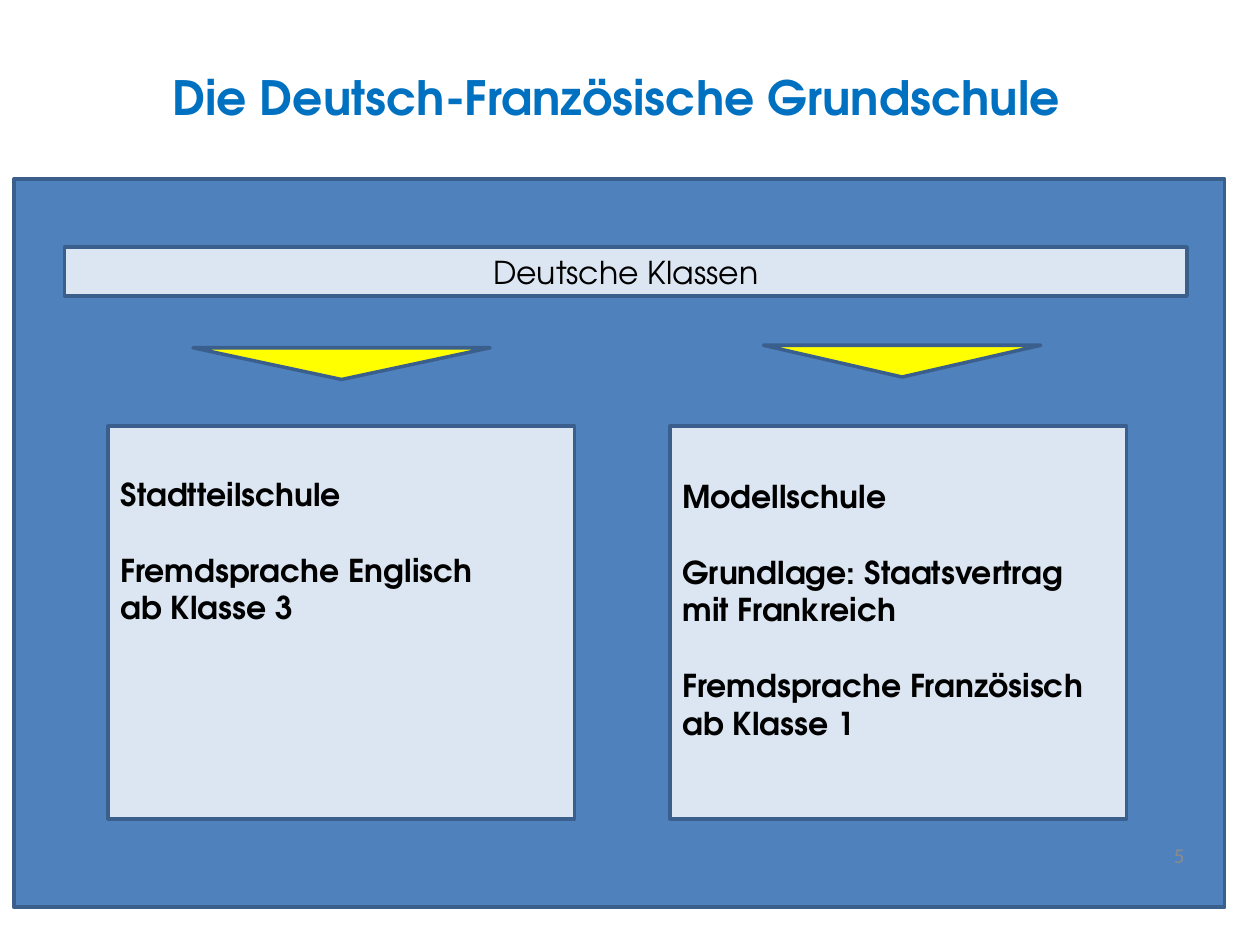
from dataclasses import dataclass

from pptx import Presentation
from pptx import util as u
from pptx.dml.color import RGBColor
from pptx.enum import shapes, text

FONT = "TeX Gyre Adventor"
COLORS = {
    "title": "0070C0",
    "panel": "4F81BD",
    "box": "DCE6F2",
    "arrow": "FFFF00",
    "border": "3A5F8C",
    "text": "000000",
    "number": "8B8B8B",
}
BLOCK_GAP = 21.5  # points between text blocks
BOX_TOP, BOX_HEIGHT = 8.59, 7.92
ARROW_HEIGHT = 0.64


@dataclass(frozen=True)
class Area:
    """Position and size in centimetres."""
    left: float
    top: float
    width: float
    height: float

    def lengths(self) -> list[u.Cm]:
        return [u.Cm(v) for v in (self.left, self.top, self.width, self.height)]


@dataclass(frozen=True)
class SchoolType:
    left: float
    width: float
    text_top: float
    arrow: Area
    blocks: tuple[tuple[str, ...], ...]  # lines grouped into blocks


SCHOOL_TYPES = (
    SchoolType(2.18, 9.4, 0.99, Area(3.89, 7.01, 5.99, ARROW_HEIGHT),
               (("Stadtteilschule",), ("Fremdsprache Englisch", "ab Klasse 3"))),
    SchoolType(13.51, 9.2, 1.03, Area(15.39, 6.96, 5.59, ARROW_HEIGHT),
               (("Modellschule",), ("Grundlage: Staatsvertrag mit Frankreich",),
                ("Fremdsprache Französisch ab Klasse 1",))),
)


def add_figure(page, kind, area: Area, fill: str):
    figure = page.shapes.add_shape(kind, *area.lengths())
    figure.shadow.inherit = False
    figure.fill.solid()
    figure.fill.fore_color.rgb = RGBColor.from_string(COLORS[fill])
    figure.line.color.rgb = RGBColor.from_string(COLORS["border"])
    figure.line.width = u.Pt(2)
    return figure


def add_span(para, words: str, size: float, color: str,
             bold: bool = False, font: str = FONT) -> None:
    span = para.add_run()
    span.text = words
    span.font.name = font
    span.font.size = u.Pt(size)
    span.font.bold = bold
    span.font.color.rgb = RGBColor.from_string(COLORS[color])


def add_school_type(page, school: SchoolType) -> None:
    arrow = add_figure(page, shapes.MSO_SHAPE.ISOSCELES_TRIANGLE, school.arrow, "arrow")
    arrow.rotation = 180
    area = Area(school.left, BOX_TOP, school.width, BOX_HEIGHT)
    frame = add_figure(page, shapes.MSO_SHAPE.RECTANGLE, area, "box").text_frame
    frame.word_wrap = True
    frame.vertical_anchor = text.MSO_ANCHOR.TOP
    frame.margin_top = u.Cm(school.text_top)
    para = None
    for block in school.blocks:
        for index, line in enumerate(block):
            starts_later_block = para is not None and index == 0
            para = frame.paragraphs[0] if para is None else frame.add_paragraph()
            para.alignment = text.PP_ALIGN.LEFT
            para.space_before = u.Pt(BLOCK_GAP if starts_later_block else 0)
            add_span(para, line, 18, "text", bold=True)


def main() -> None:
    deck = Presentation()
    deck.slide_width, deck.slide_height = u.Cm(25.4), u.Cm(19.05)
    page = deck.slides.add_slide(deck.slide_layouts[5])

    # Title
    title = page.shapes.title
    title.left, title.top, title.width, title.height = Area(0, 0.76, 25.1, 2.39).lengths()
    title.text_frame.vertical_anchor = text.MSO_ANCHOR.MIDDLE
    para = title.text_frame.paragraphs[0]
    para.alignment = text.PP_ALIGN.CENTER
    add_span(para, "Die Deutsch-Französische Grundschule ", 27, "title", bold=True)

    # Background panel and heading bar
    rectangle = shapes.MSO_SHAPE.RECTANGLE
    add_figure(page, rectangle, Area(0.28, 3.61, 24.41, 14.68), "panel")
    bar = add_figure(page, rectangle, Area(1.3, 4.98, 22.63, 0.99), "box")
    bar.text_frame.vertical_anchor = text.MSO_ANCHOR.MIDDLE
    para = bar.text_frame.paragraphs[0]
    para.alignment = text.PP_ALIGN.CENTER
    add_span(para, "Deutsche Klassen", 18, "text")

    # The two school types, each under its arrow
    for school in SCHOOL_TYPES:
        add_school_type(page, school)

    # Page number
    number = page.shapes.add_textbox(*Area(18.2, 16.74, 5.93, 1.01).lengths())
    number.text_frame.word_wrap = True
    number.text_frame.vertical_anchor = text.MSO_ANCHOR.MIDDLE
    para = number.text_frame.paragraphs[0]
    para.alignment = text.PP_ALIGN.RIGHT
    add_span(para, "5", 12, "number", font="Calibri")

    deck.save("out.pptx")


if __name__ == "__main__":
    main()
